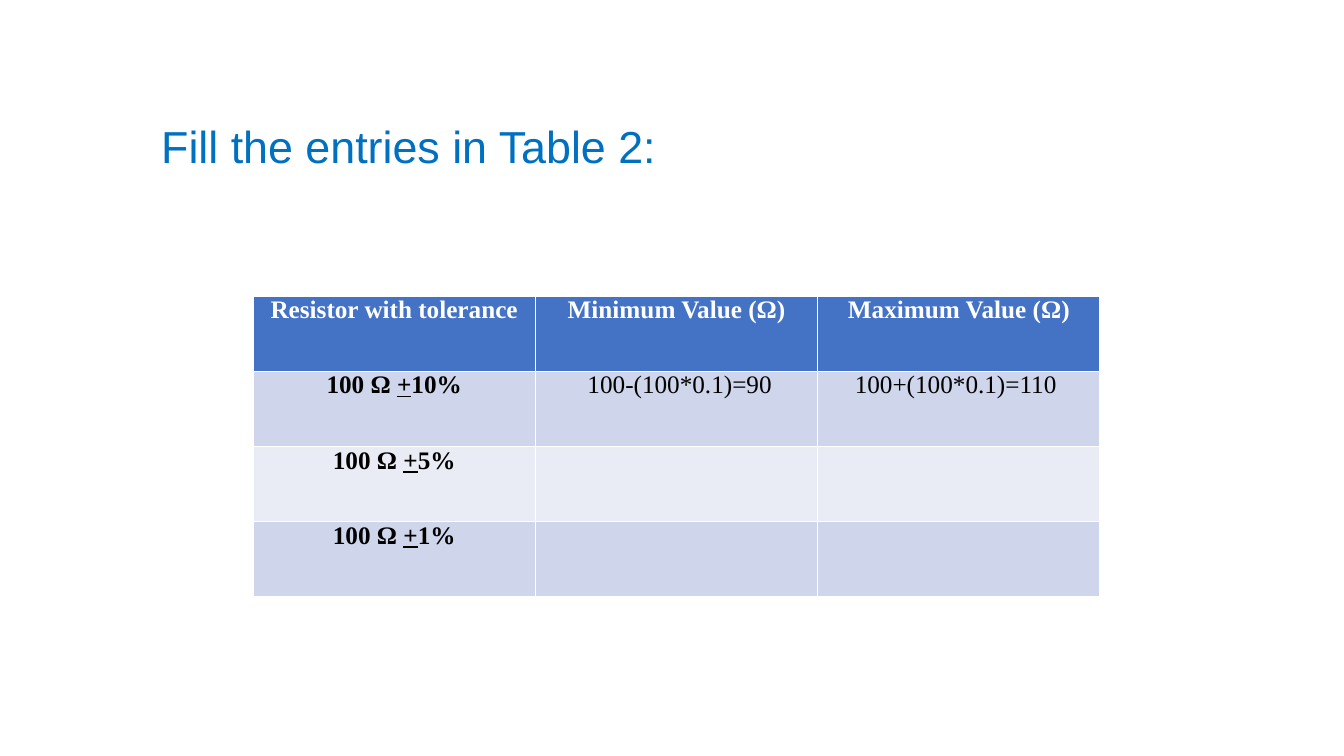
from pptx import Presentation
from pptx.dml.color import RGBColor
from pptx.enum.text import MSO_ANCHOR, PP_ALIGN
from pptx.util import Inches, Pt

HEADS = ["Resistor with tolerance", "Minimum Value (Ω)", "Maximum Value (Ω)"]
# Each cell is a list of runs; the plus sign is underlined as a ± mark
ROWS = [
    [["100 Ω ", "+", "10%"], [" 100-(100*0.1)=90"], ["100+(100*0.1)=110 "]],
    [["100 Ω ", "+", "5%"], [], []],
    [["100 Ω ", "+", "1%"], [], []],
]
BANDS = ["CFD5EA", "E9EBF5"]
TITLE = {"name": "Arial", "size": Pt(32)}
BODY = {"name": "Times New Roman", "size": Pt(18)}
PAD = {"margin_left": Inches(0.07), "margin_right": Inches(0.07),
       "margin_top": 0, "margin_bottom": 0}


def color(code):
    return RGBColor.from_string(code)


def assign(item, values):
    for key, value in values.items():
        setattr(item, key, value)


def add_run(para, text, code, style):
    run = para.add_run()
    run.text = text
    assign(run.font, style)
    run.font.color.rgb = color(code)


def add_title(slide, box, text):
    frame = slide.shapes.add_textbox(*map(Inches, box)).text_frame
    assign(frame, {"word_wrap": True, "vertical_anchor": MSO_ANCHOR.MIDDLE})
    para = frame.paragraphs[0]
    para.line_spacing = 0.9
    add_run(para, text, "0070C0", TITLE)


def fill_cell(cell, runs, back, code, bold):
    assign(cell, PAD)
    cell.fill.solid()
    cell.fill.fore_color.rgb = color(back)
    para = cell.text_frame.paragraphs[0]
    para.alignment = PP_ALIGN.CENTER
    for text in runs:
        mark = {"bold": bold, "underline": text == "+"}
        add_run(para, text, code, BODY | mark)


def add_grid(slide, box):
    size = len(ROWS) + 1, len(HEADS)
    table = slide.shapes.add_table(*size, *map(Inches, box)).table
    # Header row
    for col, head in enumerate(HEADS):
        fill_cell(table.cell(0, col), [head], "4472C4", "FFFFFF", True)
    # Banded rows, with the first column in bold
    for row, cells in enumerate(ROWS):
        for col, runs in enumerate(cells):
            fill_cell(table.cell(row + 1, col), runs, BANDS[row % 2],
                      "000000", col == 0)


def main():
    deck = Presentation()
    assign(deck, {"slide_width": Inches(13.33), "slide_height": Inches(7.5)})
    slide = deck.slides.add_slide(deck.slide_layouts[6])
    add_title(slide, (1.5, 0.68, 10.98, 1.59), "Fill the entries in Table 2:")
    add_grid(slide, (2.51, 2.94, 8.4, 2.98))
    deck.save("out.pptx")


if __name__ == "__main__":
    main()
